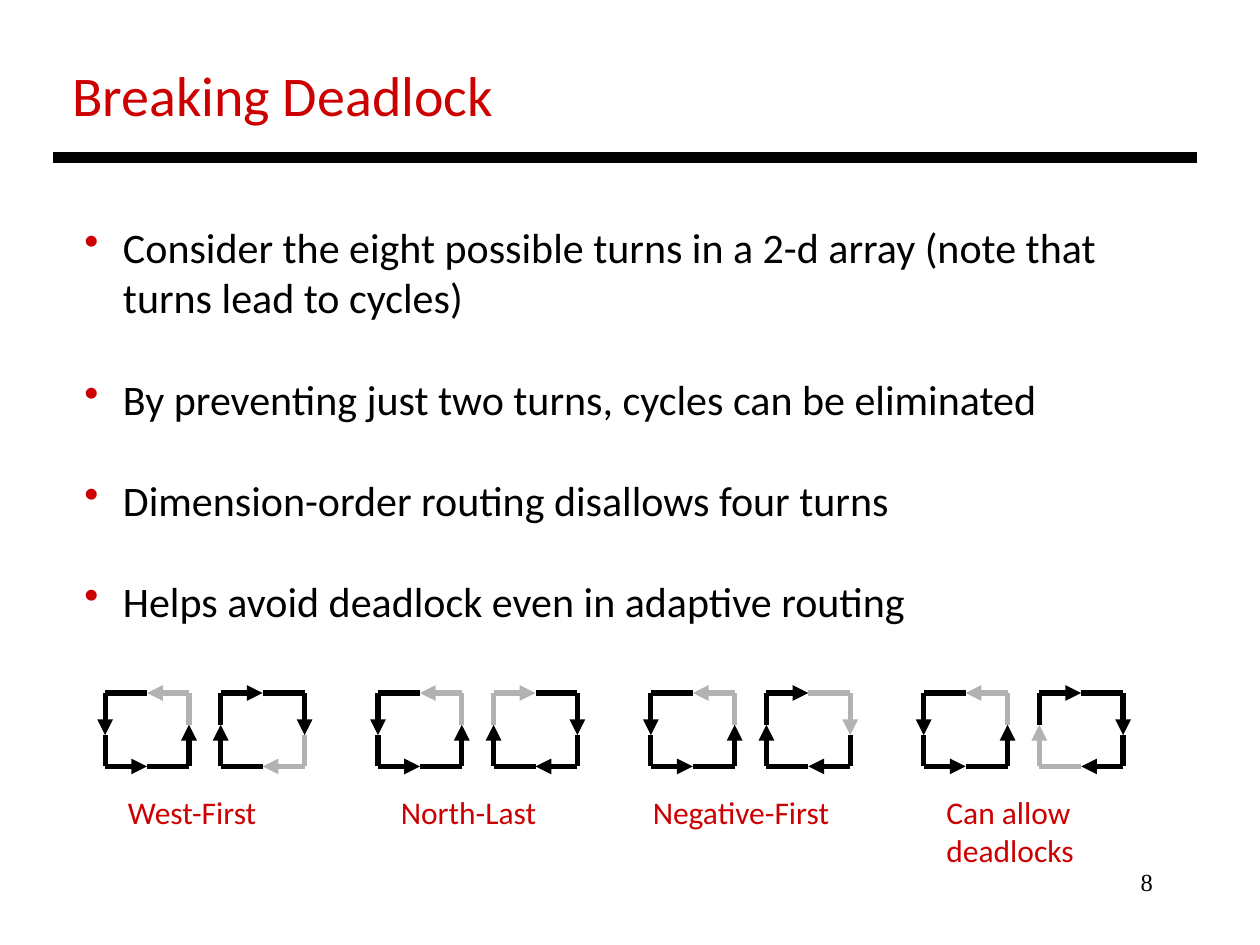
from pptx import Presentation
from pptx.dml.color import RGBColor
from pptx.enum.shapes import MSO_CONNECTOR
from pptx.enum.text import PP_ALIGN
from pptx.oxml.ns import qn
from pptx.util import Cm, Pt
from lxml.etree import SubElement

COLORS = {"accent": "CC0000", "ink": "000000", "banned": "B2B2B2"}

POINTS = [
    "Consider the eight possible turns in a 2-d array (note that turns lead to cycles)",
    "By preventing just two turns, cycles can be eliminated",
    "Dimension-order routing disallows four turns",
    "Helps avoid deadlock even in adaptive routing",
]

# Caption lines, caption left offset, turn banned in the clockwise cycle
SCHEMES = [
    (["West-First"], 0.21, "bottom right"),
    (["North-Last"], 0.21, "top left"),
    (["Negative-First"], -0.21, "top right"),
    (["Can allow", "deadlocks"], 0.21, "bottom left"),
]
SCHEME_PITCH = 5.5
CYCLE_W, CYCLE_H = 1.69, 1.48
DOWN_TIP, UP_TIP = 0.85, 0.64  # heights at which vertical arrows end


def add_text(slide, box, lines, size, color, font="Calibri", wrap=False):
    frame = slide.shapes.add_textbox(*map(Cm, box)).text_frame
    frame.word_wrap = wrap
    for index, line in enumerate(lines):
        paragraph = frame.paragraphs[0] if index == 0 else frame.add_paragraph()
        paragraph.text = line
        paragraph.font.size = Pt(size)
        paragraph.font.name = font
        paragraph.font.color.rgb = RGBColor.from_string(COLORS[color])
    return frame.paragraphs


def add_line(slide, start, end, color, width, arrow=False):
    line = slide.shapes.add_connector(
        MSO_CONNECTOR.STRAIGHT, *map(Cm, (*start, *end)))
    line.line.color.rgb = RGBColor.from_string(COLORS[color])
    line.line.width = Pt(width)
    properties = line._element.spPr
    if arrow:
        SubElement(properties.find(qn("a:ln")), qn("a:tailEnd"), type="triangle")
    SubElement(properties, qn("a:effectLst"))


def add_header(slide, left, top, width):
    add_text(slide, (left + 0.15, top, 9.35, 1.63),
             ["Breaking Deadlock"], 32, "accent")
    rule_y = top + 2.08
    add_line(slide, (left, rule_y), (left + width, rule_y), "ink", 6)


def add_bullets(slide, box):
    paragraphs = add_text(slide, box, POINTS, 24, "ink", wrap=True)
    for index, paragraph in enumerate(paragraphs):
        if index:
            paragraph.space_before = Pt(29)
        properties = paragraph._p.get_or_add_pPr()
        properties.set("marL", str(Cm(0.78)))
        properties.set("indent", str(-Cm(0.78)))
        # Bullet elements precede the default run properties
        bullet_color = SubElement(properties, qn("a:buClr"))
        SubElement(bullet_color, qn("a:srgbClr"), val=COLORS["accent"])
        bullet = SubElement(properties, qn("a:buChar"), char="•")
        properties.find(qn("a:defRPr")).addprevious(bullet_color)
        bullet_color.addnext(bullet)


def add_cycle(slide, left, top, clockwise, banned):
    """Draw four turns, each a shaft into a corner and an arrow out of it."""
    right, bottom, middle = left + CYCLE_W, top + CYCLE_H, left + CYCLE_W / 2
    left_tip, right_tip = (UP_TIP, DOWN_TIP) if clockwise else (DOWN_TIP, UP_TIP)
    left_mid, right_mid = (left, top + left_tip), (right, top + right_tip)
    top_mid, bottom_mid = (middle, top), (middle, bottom)
    turns = {
        "top left": (left_mid, (left, top), top_mid),
        "top right": (top_mid, (right, top), right_mid),
        "bottom right": (right_mid, (right, bottom), bottom_mid),
        "bottom left": (bottom_mid, (left, bottom), left_mid),
    }
    for name, turn in turns.items():
        start, corner, end = turn if clockwise else reversed(turn)
        color = "banned" if name == banned else "ink"
        add_line(slide, start, corner, color, 3)
        add_line(slide, corner, end, color, 3, arrow=True)


def add_scheme(slide, left, top, caption, caption_offset, banned):
    add_cycle(slide, left, top, False, "top right")
    add_cycle(slide, left + 2.33, top, True, banned)
    add_text(slide, (left + caption_offset, top + 1.9, 4.1, 0.24 + 0.78 * len(caption)),
             caption, 18, "accent")


def add_page_number(slide, box):
    number, = add_text(slide, box, ["8"], 14, "ink", "Times New Roman", wrap=True)
    number.alignment = PP_ALIGN.RIGHT


def main():
    presentation = Presentation()
    presentation.slide_width, presentation.slide_height = Cm(25.4), Cm(19.05)
    slide = presentation.slides.add_slide(presentation.slide_layouts[6])

    add_page_number(slide, (18.21, 17.35, 5.28, 1.27))
    add_header(slide, 1.06, 1.1, 23.07)
    add_bullets(slide, (1.45, 4.34, 21.2, 8.46))
    for index, scheme in enumerate(SCHEMES):
        add_scheme(slide, 2.12 + index * SCHEME_PITCH, 13.97, *scheme)

    presentation.save("out.pptx")


if __name__ == "__main__":
    main()
